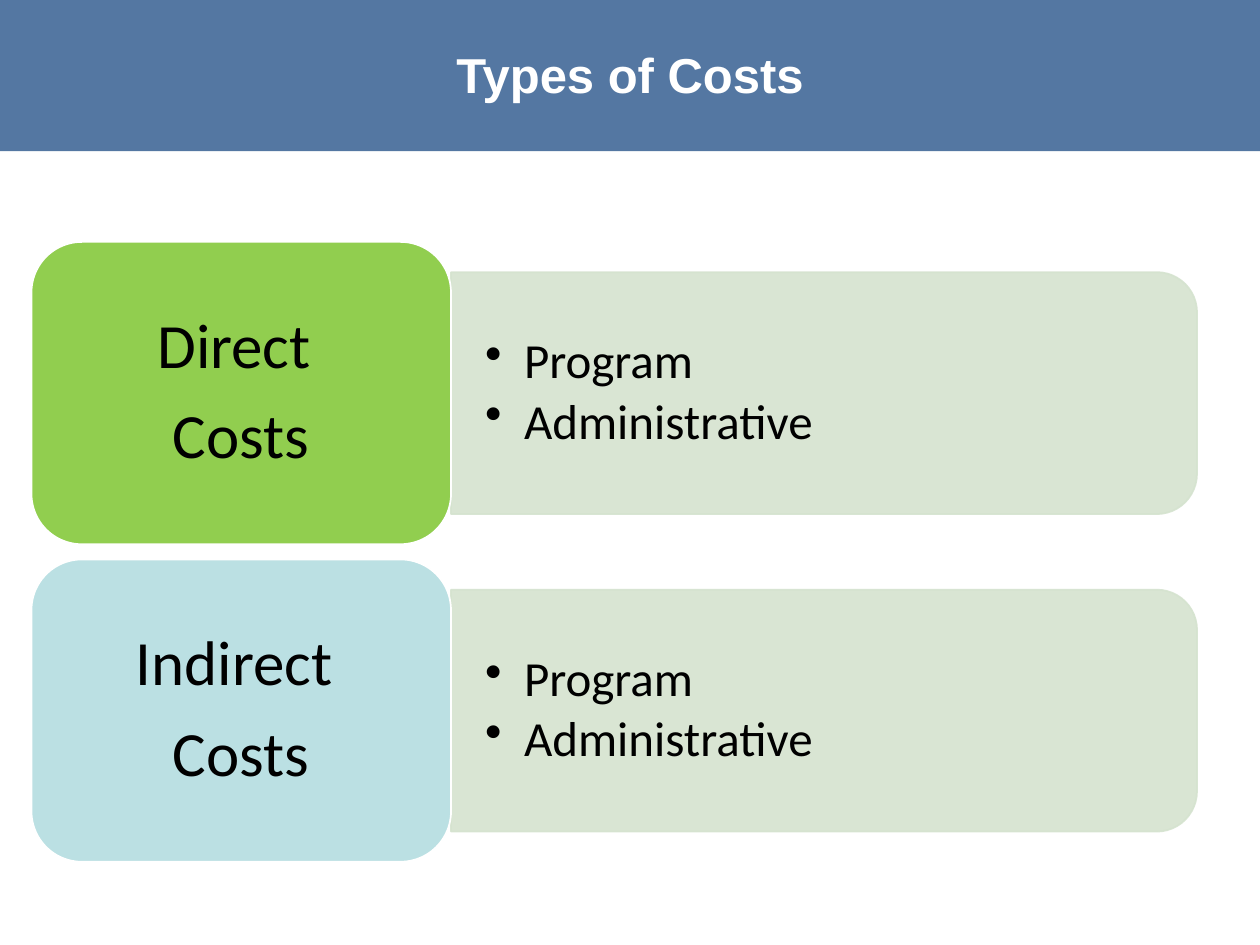
import pptx
import pptx.util
import pptx.dml.color
import pptx.enum.shapes
import pptx.enum.text
import pptx.oxml.ns
from lxml import etree

Inches = pptx.util.Inches
Pt = pptx.util.Pt
SHAPES = pptx.enum.shapes.MSO_SHAPE
ALIGN = pptx.enum.text.PP_ALIGN
MIDDLE = pptx.enum.text.MSO_ANCHOR.MIDDLE

TITLE = "Types of Costs"
COSTS = [
    (["Direct ", "Costs"], ["Program", "Administrative"], "direct"),
    (["Indirect ", "Costs"], ["Program", "Administrative"], "indirect"),
]
COLORS = {
    "banner": "376092",
    "panel": "D5E3CF",
    "direct": "91CE4F",
    "indirect": "BBE0E3",
    "white": "FFFFFF",
    "black": "000000",
}
LEFT, TOP, ROW_PITCH = 0.25, 1.92, 2.52
LABEL_W, LABEL_H = 3.33, 2.4
PANEL_W, PANEL_H = 5.92, 1.92
ITEMS_W, ITEMS_H = 5.83, 1.73


def rgb(name):
    return pptx.dml.color.RGBColor.from_string(COLORS[name])


def set_opacity(fill_parent, percent):
    color = fill_parent.find(".//" + pptx.oxml.ns.qn("a:srgbClr"))
    alpha = etree.SubElement(color, pptx.oxml.ns.qn("a:alpha"))
    alpha.set("val", str(percent * 1000))


def add_block(slide, preset, box, fill, line=None, opacity=100):
    block = slide.shapes.add_shape(preset, *map(Inches, box))
    block.shadow.inherit = False
    block.fill.solid()
    block.fill.fore_color.rgb = rgb(fill)
    if line:
        block.line.color.rgb = rgb(line)
        block.line.width = Pt(1)
    else:
        block.line.fill.background()
    if opacity < 100:
        set_opacity(block.fill._xPr, opacity)
    return block


def write(frame, lines, size, color, insets, align, font="Calibri",
          bold=False, spacing=None, after=0, bulleted=False):
    frame.word_wrap = True
    frame.vertical_anchor = MIDDLE
    (frame.margin_left, frame.margin_top,
     frame.margin_right, frame.margin_bottom) = map(Inches, insets)
    frame.text = "\n".join(lines)
    for paragraph in frame.paragraphs:
        paragraph.alignment = align
        paragraph.line_spacing = spacing
        paragraph.space_after = Pt(after)
        if bulleted:
            paragraph.level = 1
            properties = paragraph._p.get_or_add_pPr()
            properties.set("marL", str(Inches(0.31)))
            properties.set("indent", str(-Inches(0.31)))
            bullet = etree.SubElement(properties, pptx.oxml.ns.qn("a:buChar"))
            bullet.set("char", "•")
        for run in paragraph.runs:
            run.font.name = font
            run.font.size = Pt(size)
            run.font.bold = bold
            run.font.color.rgb = rgb(color)


def add_cost(slide, top, label_lines, items, label_fill):
    middle = top + LABEL_H / 2
    items_left = LEFT + LABEL_W
    panel_left = items_left + (PANEL_W - PANEL_H) / 2
    panel = add_block(slide, SHAPES.ROUND_2_SAME_RECTANGLE,
                      (panel_left, middle - PANEL_W / 2, PANEL_H, PANEL_W),
                      "panel", "panel", 90)
    panel.rotation = 90
    set_opacity(panel.line._ln, 90)

    item_list = slide.shapes.add_textbox(
        *map(Inches, (items_left, middle - ITEMS_H / 2, ITEMS_W, ITEMS_H)))
    write(item_list.text_frame, items, 28, "black", (0.27, 0.14, 0.27, 0.14),
          ALIGN.LEFT, spacing=0.9, after=4.2, bulleted=True)

    label = add_block(slide, SHAPES.ROUNDED_RECTANGLE,
                      (LEFT, top, LABEL_W, LABEL_H), label_fill, "white")
    write(label.text_frame, label_lines, 36, "black", (0.15, 0.07, 0.15, 0.07),
          ALIGN.CENTER, spacing=0.9, after=12.6)


def main():
    deck = pptx.Presentation()
    deck.slide_width, deck.slide_height = Inches(10), Inches(7.5)
    slide = deck.slides.add_slide(deck.slide_layouts[6])

    banner = add_block(slide, SHAPES.RECTANGLE, (0, 0, 10, 1.2), "banner", opacity=85)
    write(banner.text_frame, [TITLE], 28, "white", (0.1, 0.05, 0.1, 0.08),
          ALIGN.CENTER, font="Arial", bold=True)

    for row, cost in enumerate(COSTS):
        add_cost(slide, TOP + row * ROW_PITCH, *cost)

    deck.save("out.pptx")


if __name__ == "__main__":
    main()
